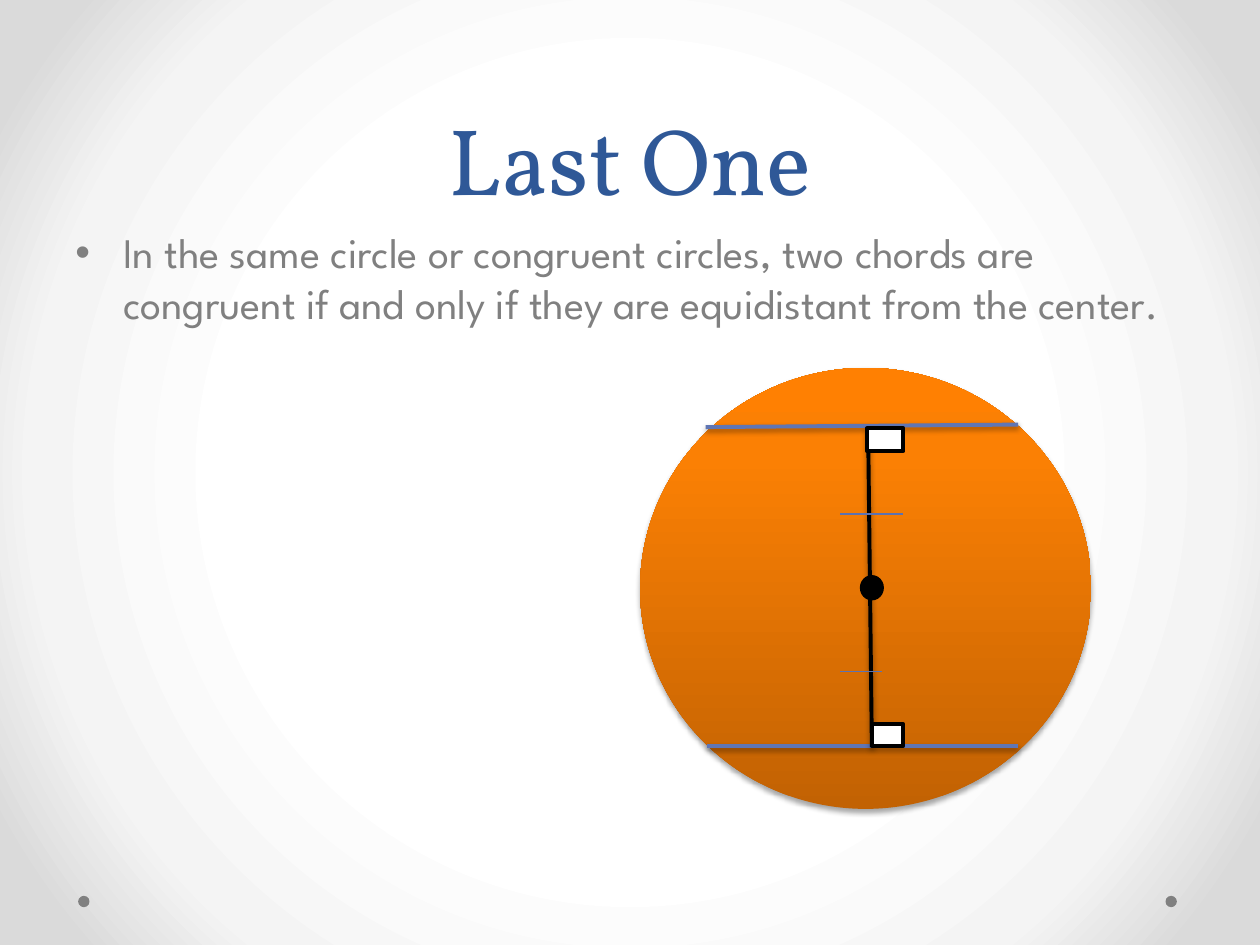
from pptx import Presentation
from pptx.dml.color import RGBColor
from pptx.enum.shapes import MSO_CONNECTOR, MSO_SHAPE
from pptx.enum.text import MSO_ANCHOR, PP_ALIGN
from pptx.oxml import parse_xml
from pptx.oxml.ns import nsdecls
from pptx.util import Inches, Pt

NAVY = RGBColor(0x2F, 0x58, 0x97)
GRAY = RGBColor(0x80, 0x80, 0x80)
BLUE = RGBColor(0x60, 0x76, 0xB4)
TICK = RGBColor(0x5C, 0x72, 0xB2)
BLACK = RGBColor(0, 0, 0)
WHITE = RGBColor(0xFF, 0xFF, 0xFF)
DARK = RGBColor(0xC2, 0x62, 0x03)
MID = RGBColor(0xFB, 0x80, 0x04)
LIGHT = RGBColor(0xFF, 0x80, 0x02)
PALE = RGBColor(0xF4, 0xF4, 0xF4)
EDGE = RGBColor(0xDA, 0xDA, 0xDA)


def grad(stops, way):
    marks = "".join(
        f'<a:gs pos="{pos * 1000}"><a:srgbClr val="{color}"/></a:gs>'
        for pos, color in stops)
    return (f'<a:gradFill {nsdecls("a")} rotWithShape="1">'
            f'<a:gsLst>{marks}</a:gsLst>{way}</a:gradFill>')


def shade(item, alpha=0, dist=0):
    glow = "" if not alpha else (
        f'<a:outerShdw blurRad="{Pt(3.1)}" dist="{Pt(dist)}" dir="5400000" '
        f'rotWithShape="0"><a:srgbClr val="000000">'
        f'<a:alpha val="{alpha * 1000}"/></a:srgbClr></a:outerShdw>')
    item.element.spPr.append(parse_xml(
        f'<a:effectLst {nsdecls("a")}>{glow}</a:effectLst>'))


deck = Presentation()
deck.slide_width = Inches(10)
deck.slide_height = Inches(7.5)
slide = deck.slides.add_slide(deck.slide_layouts[6])
shapes = slide.shapes

back = grad([(50, WHITE), (76, PALE), (92, EDGE)],
            '<a:path path="circle"><a:fillToRect l="50000" t="50000" '
            'r="50000" b="50000"/></a:path>')
slide.element.cSld.insert(0, parse_xml(
    f'<p:bg {nsdecls("p", "a")}><p:bgPr>{back}<a:effectLst/></p:bgPr></p:bg>'))

for left in (9.25, 0.62):
    dot = shapes.add_shape(MSO_SHAPE.OVAL, Inches(left), Inches(7.11),
                           Inches(0.09), Inches(0.09))
    dot.fill.solid()
    dot.fill.fore_color.rgb = GRAY
    dot.line.fill.background()
    dot.shadow.inherit = False

words = "In the same circle or congruent circles, two chords are congruent if and only if they are equidistant from the center."
texts = [
    ("Last One", 0, 1.75, MSO_ANCHOR.BOTTOM, "Vollkorn", 54, NAVY),
    (words, 1.75, 4.95, MSO_ANCHOR.TOP, "League Spartan", 24, GRAY),
]
for text, top, high, anchor, face, size, color in texts:
    box = shapes.add_textbox(Inches(0.5), Inches(top), Inches(9), Inches(high))
    frame = box.text_frame
    frame.word_wrap = True
    frame.vertical_anchor = anchor
    frame.text = text
    para = frame.paragraphs[0]
    font = para.runs[0].font
    font.name = face
    font.size = Pt(size)
    font.color.rgb = color
    if anchor == MSO_ANCHOR.BOTTOM:
        para.alignment = PP_ALIGN.CENTER
        para.line_spacing = Pt(58)
    else:
        para.space_before = Pt(4.8)
        props = para._p.get_or_add_pPr()
        props.set("marL", str(Inches(0.38)))
        props.set("indent", str(Inches(-0.38)))
        props.append(parse_xml(f'<a:buFont {nsdecls("a")} typeface="Arial"/>'))
        props.append(parse_xml(f'<a:buChar {nsdecls("a")} char="•"/>'))

disc = shapes.add_shape(MSO_SHAPE.OVAL, Inches(5.08), Inches(2.92),
                        Inches(3.58), Inches(3.5))
disc.line.fill.background()
disc.element.spPr.insert(2, parse_xml(grad(
    [(0, DARK), (80, MID), (100, LIGHT)],
    '<a:lin ang="16200000" scaled="0"/>')))
shade(disc, 35, 1.8)

lines = [
    (5.6, 3.39, 8.08, 3.37, BLUE, 2.25, 38),
    (5.61, 5.92, 8.08, 5.92, BLUE, 2.25, 38),
    (6.89, 3.4, 6.92, 5.93, BLACK, 2.25, 38),
    (6.67, 4.08, 7.17, 4.08, TICK, 0.75, 0),
    (6.67, 5.33, 7, 5.33, TICK, 0.75, 0),
]
for x1, y1, x2, y2, color, width, alpha in lines:
    line = shapes.add_connector(MSO_CONNECTOR.STRAIGHT, Inches(x1), Inches(y1),
                                Inches(x2), Inches(y2))
    line.line.color.rgb = color
    line.line.width = Pt(width)
    shade(line, alpha, 1.6)

marks = [
    (MSO_SHAPE.OVAL, 6.84, 4.58, 0.16, 0.17, BLACK),
    (MSO_SHAPE.RECTANGLE, 6.88, 3.4, 0.29, 0.18, WHITE),
    (MSO_SHAPE.RECTANGLE, 6.92, 5.75, 0.25, 0.17, WHITE),
]
for kind, left, top, wide, high, color in marks:
    mark = shapes.add_shape(kind, Inches(left), Inches(top),
                            Inches(wide), Inches(high))
    mark.fill.solid()
    mark.fill.fore_color.rgb = color
    mark.line.color.rgb = BLACK
    mark.line.width = Pt(2.25)
    mark.shadow.inherit = False

deck.save("out.pptx")
